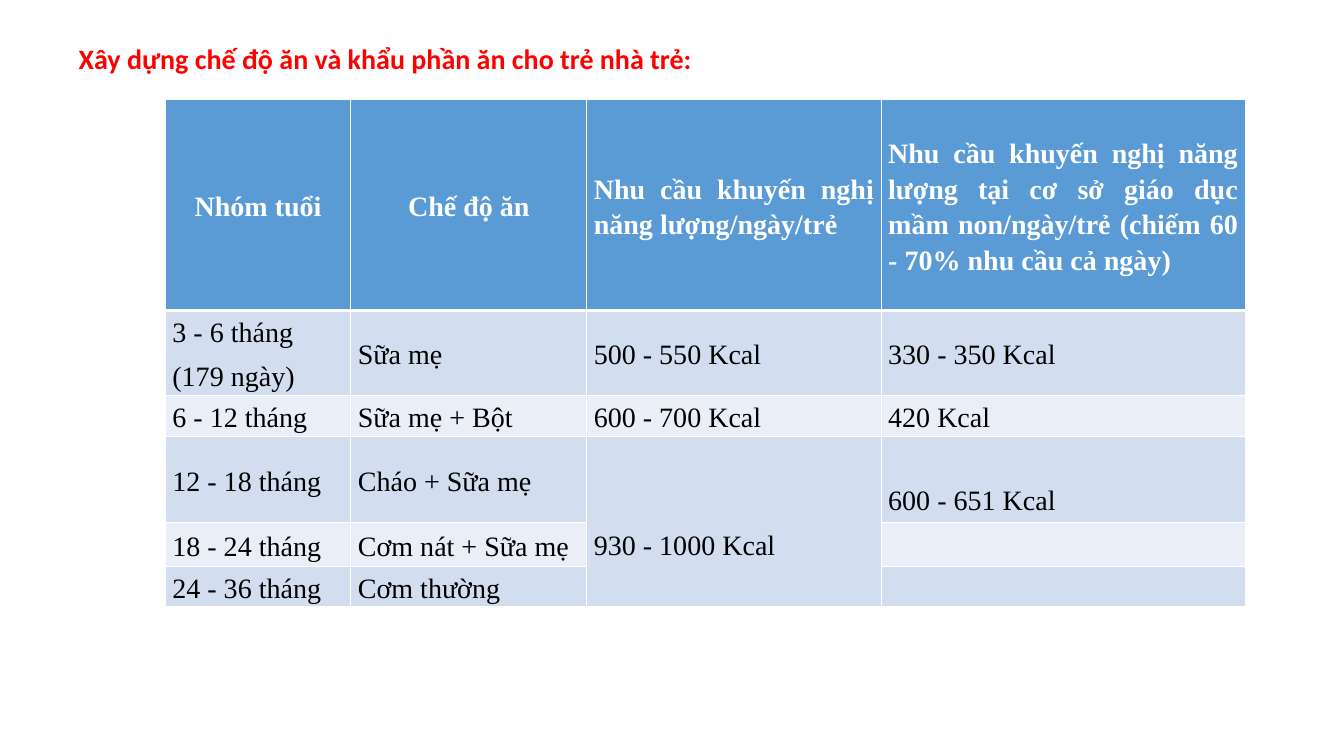
import pptx
import pptx.util
import pptx.dml.color
import pptx.enum.text
import pptx.oxml

Inches = pptx.util.Inches
Pt = pptx.util.Pt
Align = pptx.enum.text.PP_ALIGN
Anchor = pptx.enum.text.MSO_ANCHOR

theme = {
    "title": "FF0000", "head": "5B9BD5", "odd": "D2DEEF", "even": "EAEFF7",
    "light": "FFFFFF", "dark": "000000",
    "sans": "Calibri", "serif": "Times New Roman", "size": 20,
}


def style(para, face, color, bold):
    for run in para.runs:
        run.font.name = face
        run.font.size = Pt(theme["size"])
        run.font.bold = bold
        run.font.color.rgb = pptx.dml.color.RGBColor.from_string(theme[color])


def border(cell, side, width):
    props = cell._tc.get_or_add_tcPr()
    line = pptx.oxml.parse_xml(
        f'<a:{side} xmlns:a="http://schemas.openxmlformats.org/drawingml/2006/main" '
        f'w="{Pt(width)}"><a:solidFill><a:srgbClr val="{theme["light"]}"/>'
        f'</a:solidFill></a:{side}>')
    props.append(line)


deck = pptx.Presentation()
deck.slide_width = Inches(13.33)
deck.slide_height = Inches(7.5)
slide = deck.slides.add_slide(deck.slide_layouts[5])

title = slide.shapes.title
title.left, title.top = Inches(0.68), Inches(0.36)
title.width, title.height = Inches(12.27), Inches(0.44)
frame = title.text_frame
frame.text = "Xây dựng chế độ ăn và khẩu phần ăn cho trẻ nhà trẻ:"
frame.word_wrap = True
frame.auto_size = pptx.enum.text.MSO_AUTO_SIZE.NONE
frame.vertical_anchor = Anchor.MIDDLE
frame.paragraphs[0].alignment = Align.LEFT
style(frame.paragraphs[0], theme["sans"], "title", True)

rows = [
    ["Nhóm tuổi", "Chế độ ăn", "Nhu cầu khuyến nghị năng lượng/ngày/trẻ",
     "Nhu cầu khuyến nghị năng lượng tại cơ sở giáo dục mầm non/ngày/trẻ "
     "(chiếm 60 - 70% nhu cầu cả ngày)"],
    ["3 - 6 tháng\n(179 ngày)", "Sữa mẹ", "500 - 550 Kcal", "330 - 350 Kcal"],
    ["6 - 12 tháng", "Sữa mẹ + Bột", "600 - 700 Kcal", "420 Kcal"],
    ["12 - 18 tháng", "Cháo + Sữa mẹ", "930 - 1000 Kcal", "600 - 651 Kcal"],
    ["18 - 24 tháng", "Cơm nát + Sữa mẹ", "", ""],
    ["24 - 36 tháng", "Cơm thường", "", ""],
]
widths = [1.84, 2.34, 2.92, 3.61]
heights = [2.09, 0.84, 0.41, 0.85, 0.44, 0.4]
drops = {(3, 2): 0.89, (3, 3): 0.44}

table = slide.shapes.add_table(
    len(rows), len(widths), Inches(1.64), Inches(0.99),
    Inches(sum(widths)), Inches(sum(heights))).table
for col, width in zip(table.columns, widths):
    col.width = Inches(width)
for row, height in zip(table.rows, heights):
    row.height = Inches(height)
table.cell(3, 2).merge(table.cell(5, 2))

for r, texts in enumerate(rows):
    head = r == 0
    fill = "head" if head else "odd" if r % 2 else "even"
    for c, text in enumerate(texts):
        cell = table.cell(r, c)
        cell.margin_left = cell.margin_right = Inches(0.07)
        cell.margin_top = Inches(drops.get((r, c), 0))
        cell.margin_bottom = 0
        cell.vertical_anchor = Anchor.TOP if (r, c) in drops else Anchor.MIDDLE
        for side in ("lnL", "lnR", "lnT", "lnB"):
            thick = (head and side == "lnB") or (r == 1 and side == "lnT")
            border(cell, side, 3 if thick else 1)
        cell.fill.solid()
        cell.fill.fore_color.rgb = pptx.dml.color.RGBColor.from_string(theme[fill])
        if not text:
            continue
        cell.text_frame.text = text
        for para in cell.text_frame.paragraphs:
            para.line_spacing = 1.15
            para.space_after = Pt(6)
            para.alignment = Align.LEFT
            if head:
                para.alignment = Align.CENTER if c < 2 else Align.JUSTIFY
            style(para, theme["serif"], "light" if head else "dark", head)

deck.save("out.pptx")
